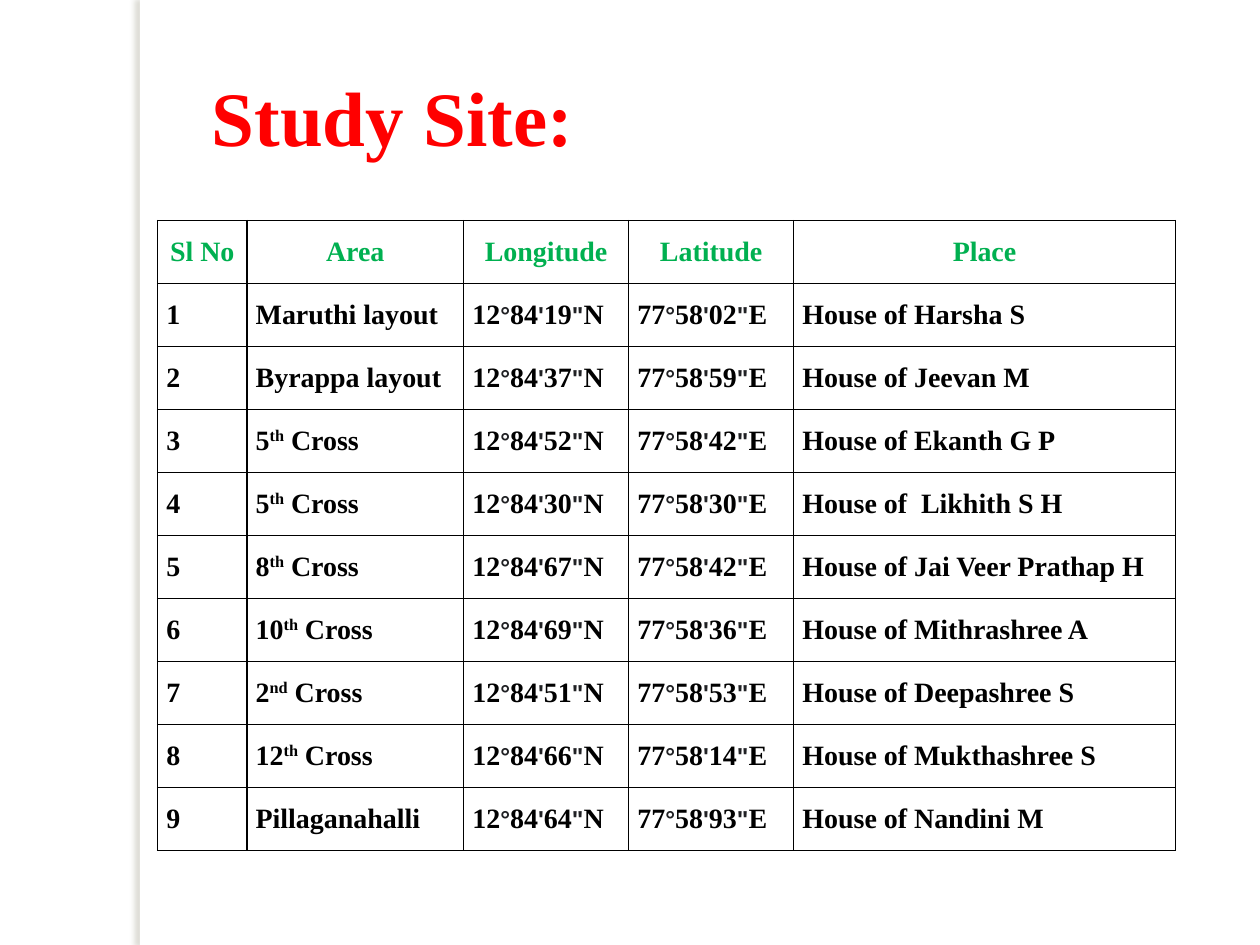
from itertools import groupby

from lxml import etree
from pptx import Presentation
from pptx import util as u
from pptx.dml.color import RGBColor
from pptx.enum import shapes, text
from pptx.oxml.ns import qn

COLORS = {
    "paper": "FFFFFF",
    "title": "FF0000",
    "header": "00B050",
    "ink": "000000",
    "mark": "202124",
    "shadow": "7F7D63",
}
HEADERS = ["Sl No", "Area", "Longitude", "Latitude", "Place"]
COLUMN_WIDTHS = [0.71, 1.72, 1.31, 1.31, 3.03]
ROW_HEIGHT = 0.5
# Area (superscript between carets), seconds north, seconds east, householder
SITES = [
    ("Maruthi layout", "19", "02", "Harsha S"),
    ("Byrappa layout", "37", "59", "Jeevan M"),
    ("5^th^ Cross", "52", "42", "Ekanth G P"),
    ("5^th^ Cross", "30", "30", " Likhith S H"),
    ("8^th^ Cross", "67", "42", "Jai Veer Prathap H"),
    ("10^th^ Cross", "69", "36", "Mithrashree A"),
    ("2^nd^ Cross", "51", "53", "Deepashree S"),
    ("12^th^ Cross", "66", "14", "Mukthashree S"),
    ("Pillaganahalli", "64", "93", "Nandini M"),
]


class SlideBuilder:
    serif = "Times New Roman"
    sans = "Arial"

    def __init__(self, deck):
        self.page = deck.slides.add_slide(deck.slide_layouts[5])

    def color(self, name):
        return RGBColor.from_string(COLORS[name])

    def span(self, paragraph, words, size, color, face=serif):
        span = paragraph.add_run()
        span.text = words
        font = span.font
        font.name, font.size, font.bold = face, u.Pt(size), True
        font.color.rgb = self.color(color)
        return span

    def title(self, words, left, top, width, height):
        box = self.page.shapes.title
        box.left, box.top = u.Inches(left), u.Inches(top)
        box.width, box.height = u.Inches(width), u.Inches(height)
        frame = box.text_frame
        frame.word_wrap = False
        frame.auto_size = text.MSO_AUTO_SIZE.SHAPE_TO_FIT_TEXT
        frame.vertical_anchor = text.MSO_ANCHOR.MIDDLE
        paragraph = frame.paragraphs[0]
        paragraph.alignment = text.PP_ALIGN.LEFT
        self.span(paragraph, words, 44, "title")

    def side_strip(self, left, width, height):
        """Draw the white strip that casts a soft shadow to its left."""
        strip = self.page.shapes.add_shape(
            shapes.MSO_SHAPE.RECTANGLE,
            u.Inches(left), 0, u.Inches(width), u.Inches(height))
        strip.fill.solid()
        strip.fill.fore_color.rgb = self.color("paper")
        strip.line.fill.background()
        strip.shadow.inherit = False
        effects = strip._element.spPr.find(qn("a:effectLst"))
        shadow = etree.SubElement(
            effects, qn("a:outerShdw"), blurRad=str(u.Pt(3)),
            dist=str(u.Pt(3)), dir=str(180 * 60000), rotWithShape="0")
        tint = etree.SubElement(shadow, qn("a:srgbClr"), val=COLORS["shadow"])
        etree.SubElement(tint, qn("a:alpha"), val="25000")

    def table(self, left, top, widths, row_count):
        frame = self.page.shapes.add_table(
            row_count, len(widths), u.Inches(left), u.Inches(top),
            u.Inches(sum(widths)), u.Inches(ROW_HEIGHT * row_count))
        table = frame.table
        table.first_row = table.horz_banding = False
        for column, width in zip(table.columns, widths):
            column.width = u.Inches(width)
        return table

    def borders(self, cell):
        properties = cell._tc.get_or_add_tcPr()
        for index, side in enumerate(("lnL", "lnR", "lnT", "lnB")):
            line = etree.Element(qn(f"a:{side}"), w=str(u.Pt(1)))
            fill = etree.SubElement(line, qn("a:solidFill"))
            etree.SubElement(fill, qn("a:srgbClr"), val=COLORS["ink"])
            properties.insert(index, line)

    def cell(self, cell):
        """Format a table cell and return its paragraph."""
        cell.margin_left = cell.margin_right = u.Inches(0.07)
        cell.margin_top = cell.margin_bottom = 0
        cell.fill.solid()
        cell.fill.fore_color.rgb = self.color("paper")
        self.borders(cell)
        paragraph = cell.text_frame.paragraphs[0]
        paragraph.line_spacing = 1.5
        return paragraph

    def header(self, cell, words):
        paragraph = self.cell(cell)
        paragraph.alignment = text.PP_ALIGN.CENTER
        self.span(paragraph, words, 16, "header")

    def entry(self, cell, words):
        """Fill a body cell; words between carets are raised."""
        paragraph = self.cell(cell)
        for index, part in enumerate(words.split("^")):
            span = self.span(paragraph, part, 16, "ink")
            if index % 2:
                span.font._element.set("baseline", "30000")

    def coordinate(self, cell, words):
        paragraph = self.cell(cell)
        for is_number, letters in groupby(words, str.isalnum):
            part = "".join(letters)
            if is_number:
                self.span(paragraph, part, 16, "ink")
            else:
                self.span(paragraph, part, 14, "mark", self.sans)


def main():
    deck = Presentation()
    deck.slide_width, deck.slide_height = u.Inches(10), u.Inches(7.5)
    builder = SlideBuilder(deck)
    builder.side_strip(1.11, 0.08, 7.5)
    builder.title("Study Site:", 1.58, 0.5, 3.75, 0.84)

    table = builder.table(1.25, 1.75, COLUMN_WIDTHS, len(SITES) + 1)
    for row in table.rows:
        row.height = u.Inches(ROW_HEIGHT)
    for column, words in enumerate(HEADERS):
        builder.header(table.cell(0, column), words)
    for row, (area, north, east, name) in enumerate(SITES, start=1):
        builder.entry(table.cell(row, 0), str(row))
        builder.entry(table.cell(row, 1), area)
        builder.coordinate(table.cell(row, 2), f"12°84'{north}\"N")
        builder.coordinate(table.cell(row, 3), f"77°58'{east}\"E")
        builder.entry(table.cell(row, 4), f"House of {name}")

    deck.save("out.pptx")


if __name__ == "__main__":
    main()
